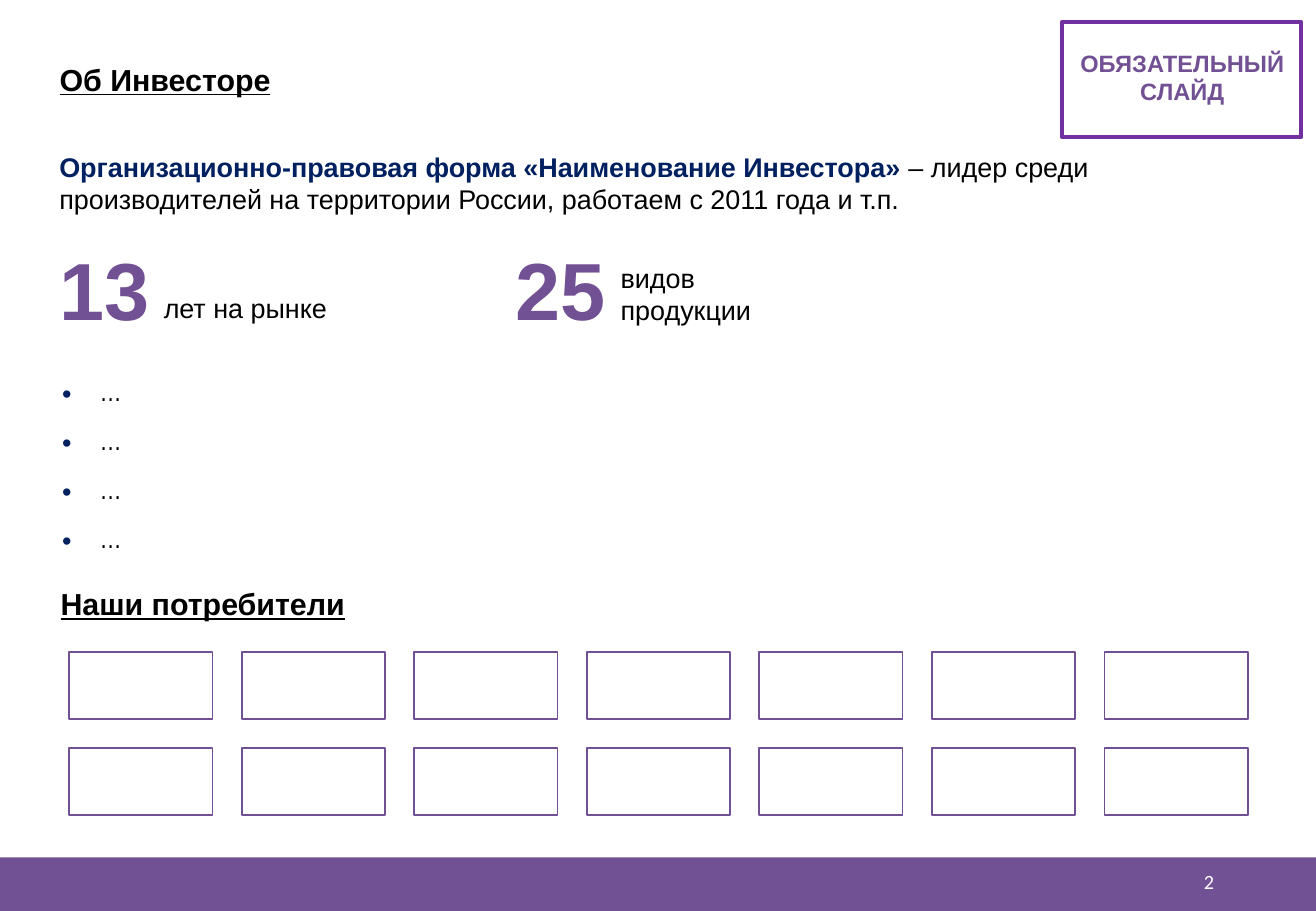
import pptx
import pptx.dml.color
import pptx.enum.shapes
import pptx.enum.text
import pptx.util
import lxml.etree
import pptx.oxml.ns

PURPLE, BADGE_PURPLE, NAVY, BLACK, WHITE = "725094", "7030A0", "002060", "000000", "FFFFFF"
ALIGN = pptx.enum.text.PP_ALIGN
ANCHOR = pptx.enum.text.MSO_ANCHOR
color = pptx.dml.color.RGBColor.from_string

presentation = pptx.Presentation()
presentation.slide_width = pptx.util.Inches(10.83)
presentation.slide_height = pptx.util.Inches(7.5)
slide = presentation.slides.add_slide(presentation.slide_layouts[5])


def place(left, top, width, height):
    """Turn percentages of the slide's width and height into lengths."""
    across, down = presentation.slide_width / 100, presentation.slide_height / 100
    return int(left * across), int(top * down), int(width * across), int(height * down)


def write(paragraph, text, size=16, hex_color=BLACK, bold=False, underline=False,
          font="Arial", align=ALIGN.LEFT):
    paragraph.alignment = align
    run = paragraph.add_run()
    run.text = text
    run.font.name = font
    run.font.size = pptx.util.Pt(size)
    run.font.bold = bold
    run.font.underline = underline
    run.font.color.rgb = color(hex_color)


# Rectangles: footer bar, badge frame and the grid of customers
rectangles = [
    (place(0, 94.13, 100, 5.87), PURPLE, None, 0),
    (place(80.7, 2.4, 18.19, 12.67), None, BADGE_PURPLE, 2.25),
]
for row in range(2):
    for column in range(7):
        customer = place(5.26 + 13.11 * column, 71.6 + 10.53 * row, 10.9, 7.33)
        rectangles.append((customer, None, PURPLE, 1))

for area, fill, line, line_width in rectangles:
    shape = slide.shapes.add_shape(pptx.enum.shapes.MSO_SHAPE.RECTANGLE, *area)
    shape.shadow.inherit = False
    if fill:
        shape.fill.solid()
        shape.fill.fore_color.rgb = color(fill)
        shape.line.fill.background()
    else:
        shape.fill.background()
        shape.line.color.rgb = color(line)
        shape.line.width = pptx.util.Pt(line_width)

# Title
heading = dict(size=18, bold=True, underline=True)
title = slide.shapes.title
title.left, title.top, title.width, title.height = place(3.6, 6, 20.22, 5.33)
title.text_frame.auto_size = pptx.enum.text.MSO_AUTO_SIZE.NONE
title.text_frame.vertical_anchor = ANCHOR.TOP
write(title.text_frame.paragraphs[0], "Об Инвесторе", **heading)

# Text boxes: each holds paragraphs, each paragraph holds runs
figure = dict(size=48, hex_color=PURPLE, bold=True)
badge = dict(size=14, hex_color=PURPLE, bold=True, align=ALIGN.CENTER)
page_number = dict(size=12, hex_color=WHITE, font="Calibri", align=ALIGN.RIGHT)
text_boxes = [
    (place(3.6, 15.87, 92.8, 8.53), ANCHOR.TOP, [[
        ("Организационно-правовая форма «Наименование Инвестора» ",
         dict(hex_color=NAVY, bold=True)),
        ("– лидер среди производителей на территории России, работаем с 2011 года и т.п.", {}),
    ]]),
    (place(3.6, 25.6, 9.42, 12.13), ANCHOR.TOP, [[("13", figure)]]),
    (place(11.54, 31.33, 14.87, 4.93), ANCHOR.TOP, [[("лет на рынке", {})]]),
    (place(38.23, 25.6, 9.42, 12.13), ANCHOR.TOP, [[("25", figure)]]),
    (place(46.26, 28, 14.31, 8.53), ANCHOR.TOP, [[("видов продукции", {})]]),
    (place(3.69, 63.6, 30.19, 5.33), ANCHOR.TOP, [[("Наши потребители", heading)]]),
    (place(81.07, 4.67, 17.54, 7.6), ANCHOR.TOP,
     [[("ОБЯЗАТЕЛЬНЫЙ", badge)], [("СЛАЙД", badge)]]),
    (place(70.64, 94.13, 22.53, 5.33), ANCHOR.MIDDLE, [[("2", page_number)]]),
]
for area, anchor, paragraphs in text_boxes:
    frame = slide.shapes.add_textbox(*area).text_frame
    frame.word_wrap = True
    frame.vertical_anchor = anchor
    for index, runs in enumerate(paragraphs):
        paragraph = frame.add_paragraph() if index else frame.paragraphs[0]
        for text, style in runs:
            write(paragraph, text, **style)

# Table of bulleted facts
facts = slide.shapes.add_table(4, 1, *place(3.79, 41.2, 94.64, 21.6)).table
facts.first_row = False
facts.horz_banding = False
indent = pptx.util.Inches(0.31)
for cell in facts.iter_cells():
    cell.fill.background()
    paragraph = cell.text_frame.paragraphs[0]
    write(paragraph, "…", font="Arial Narrow")
    properties = paragraph._p.get_or_add_pPr()
    properties.set("marL", str(indent))
    properties.set("indent", str(-indent))
    qualified = pptx.oxml.ns.qn
    bullet_color = lxml.etree.SubElement(properties, qualified("a:buClr"))
    lxml.etree.SubElement(bullet_color, qualified("a:srgbClr"), val=NAVY)
    lxml.etree.SubElement(properties, qualified("a:buFont"), typeface="Arial")
    lxml.etree.SubElement(properties, qualified("a:buChar"), char="•")

presentation.save("out.pptx")
